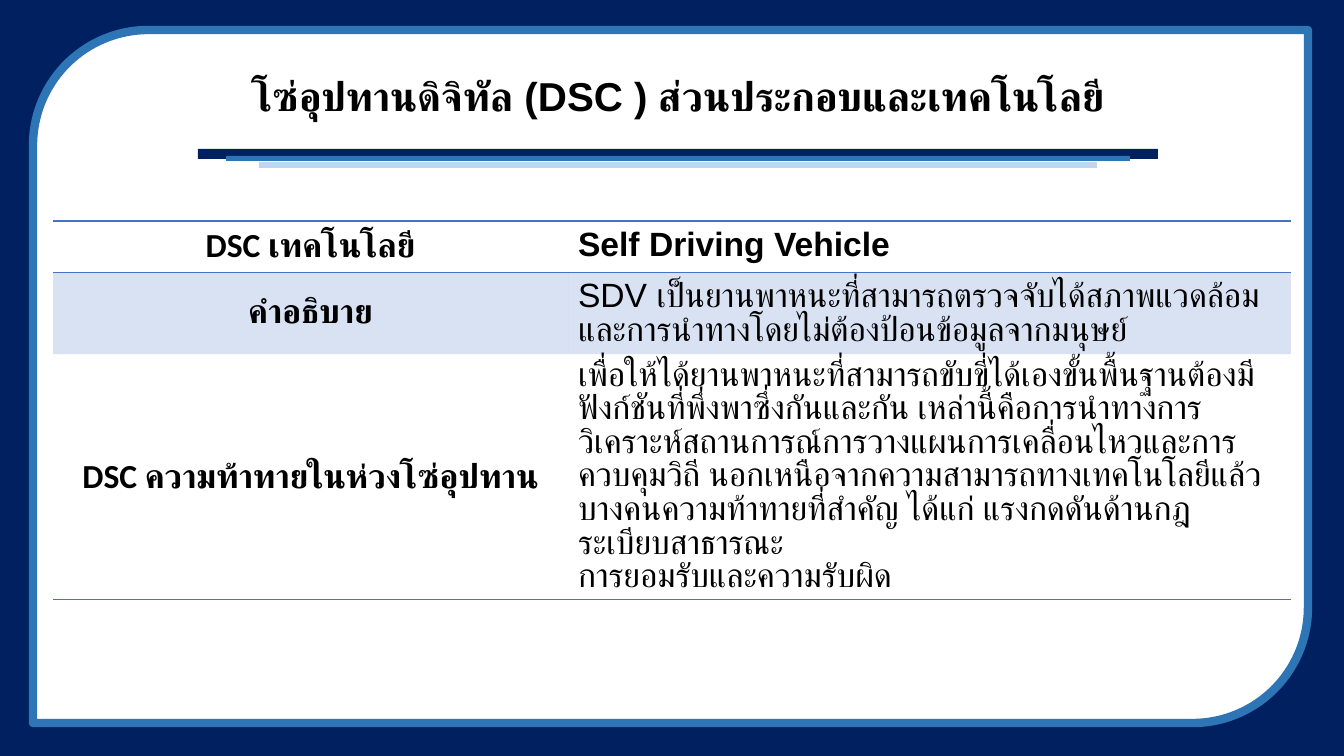
from lxml.etree import SubElement
from pptx import Presentation
from pptx.dml.color import RGBColor
from pptx.enum.shapes import MSO_SHAPE as Shape
from pptx.enum.text import MSO_ANCHOR as Anchor, PP_ALIGN as Align
from pptx.oxml.ns import qn
from pptx.util import Emu, Pt

NAVY, BLUE, PALE, ACCENT = "002060", "2E75B6", "BDD7EE", "4472C4"
WHITE, BLACK = "FFFFFF", "000000"
PLAIN_TABLE = "{2D5ABB26-0587-4C30-8999-92F81FD0307C}"
BARS = [(198, 149, 960, 10, NAVY), (226, 156, 904, 5, BLUE), (259, 162, 838, 6, PALE)]
TITLE = "โซ่อุปทานดิจิทัล (DSC ) ส่วนประกอบและเทคโนโลยี"
ROWS = [
    (51, "DSC เทคโนโลยี", ["Self Driving Vehicle"]),
    (82, "คำอธิบาย", [
        "SDV เป็นยานพาหนะที่สามารถตรวจจับได้สภาพแวดล้อม"
        "และการนำทางโดยไม่ต้องป้อนข้อมูลจากมนุษย์"]),
    (245, "DSC ความท้าทายในห่วงโซ่อุปทาน", [
        "เพื่อให้ได้ยานพาหนะที่สามารถขับขี่ได้เองขั้นพื้นฐานต้องมี"
        "ฟังก์ชันที่พึ่งพาซึ่งกันและกัน เหล่านี้คือการนำทางการ"
        "วิเคราะห์สถานการณ์การวางแผนการเคลื่อนไหวและการ"
        "ควบคุมวิถี นอกเหนือจากความสามารถทางเทคโนโลยีแล้ว"
        "บางคนความท้าทายที่สำคัญ ได้แก่ แรงกดดันด้านกฎ"
        "ระเบียบสาธารณะ",
        "การยอมรับและความรับผิด"]),
]


def px(length):
    """Turn pixels into EMU."""
    return Emu(round(length * 12192000 / 1344))


def color(value):
    """Turn a hex string into a colour."""
    return RGBColor.from_string(value)


def write(frame, lines, font="Arial", size=24, bold=False, align=Align.LEFT, spacing=None):
    """Fill a text frame with one formatted paragraph per line."""
    for index, line in enumerate(lines):
        paragraph = frame.add_paragraph() if index else frame.paragraphs[0]
        paragraph.alignment = align
        paragraph.line_spacing = spacing
        run = paragraph.add_run()
        run.text = line
        run.font.name, run.font.size, run.font.bold = font, Pt(size), bold
        run.font.color.rgb = color(BLACK)


class SlideBuilder:
    """Hold the current slide and draw its elements."""

    def __init__(self, presentation):
        """Add a title-only slide."""
        self.slide = presentation.slides.add_slide(presentation.slide_layouts[5])

    def shape(self, kind, left, top, width, height, fill, line=None, weight=0):
        """Draw a filled preset shape."""
        shape = self.slide.shapes.add_shape(kind, px(left), px(top), px(width), px(height))
        shape.shadow.inherit = False
        shape.fill.solid()
        shape.fill.fore_color.rgb = color(fill)
        if line:
            shape.line.color.rgb = color(line)
            shape.line.width = Pt(weight)
        else:
            shape.line.fill.background()

    def title(self, text, left, top, width, height):
        """Place the title in front of the frame."""
        title = self.slide.shapes.title
        title.left, title.top, title.width, title.height = map(px, (left, top, width, height))
        title.element.getparent().append(title.element)
        title.text_frame.word_wrap = True
        title.text_frame.vertical_anchor = Anchor.MIDDLE
        write(title.text_frame, [text], size=28.8, bold=True, align=Align.CENTER, spacing=0.9)

    def border(self, cell, sides):
        """Draw thin accent lines on the given sides of a cell."""
        properties = cell._tc.get_or_add_tcPr()
        for index, side in enumerate(sides):
            line = properties.makeelement(qn(f"a:ln{side}"), {"w": str(Pt(1))})
            fill = SubElement(line, qn("a:solidFill"))
            SubElement(fill, qn("a:srgbClr"), val=ACCENT)
            properties.insert(index, line)

    def shade(self, cell, opacity):
        """Fill a cell with the translucent accent colour."""
        cell.fill.solid()
        cell.fill.fore_color.rgb = color(ACCENT)
        tint = cell._tc.tcPr.find(f".//{qn('a:srgbClr')}")
        SubElement(tint, qn("a:alpha"), val=str(opacity * 1000))

    def table(self, rows, left, top, widths):
        """Draw the table of labels and descriptions."""
        height = sum(row[0] for row in rows)
        frame = self.slide.shapes.add_table(
            len(rows), len(widths), px(left), px(top), px(sum(widths)), px(height))
        table = frame.table
        table.horz_banding = False
        table._tbl.tblPr.find(qn("a:tableStyleId")).text = PLAIN_TABLE
        for column, width in zip(table.columns, widths):
            column.width = px(width)
        for index, (row_height, label, lines) in enumerate(rows):
            table.rows[index].height = px(row_height)
            head, body = table.cell(index, 0), table.cell(index, 1)
            head.vertical_anchor = Anchor.MIDDLE
            write(head.text_frame, [label], font="Calibri", bold=True, align=Align.CENTER)
            write(body.text_frame, lines, bold=index == 0)
            for cell in (head, body):
                if index == 1:
                    self.shade(cell, 20)
                else:
                    cell.fill.background()
                    self.border(cell, "TB" if index == 0 else "B")


def main():
    """Build and save the slide."""
    presentation = Presentation()
    presentation.slide_width, presentation.slide_height = px(1344), px(756)
    builder = SlideBuilder(presentation)
    builder.shape(Shape.RECTANGLE, 0, 0, 1344, 756, NAVY)
    builder.shape(Shape.ROUND_2_DIAG_RECTANGLE, 33, 30, 1275, 693, WHITE, BLUE, 6)
    for *place, fill in BARS:
        builder.shape(Shape.RECTANGLE, *place, fill)
    builder.title(TITLE, 198, 49, 960, 98)
    builder.table(ROWS, 53, 221, (515, 723))
    presentation.save("out.pptx")


if __name__ == "__main__":
    main()
